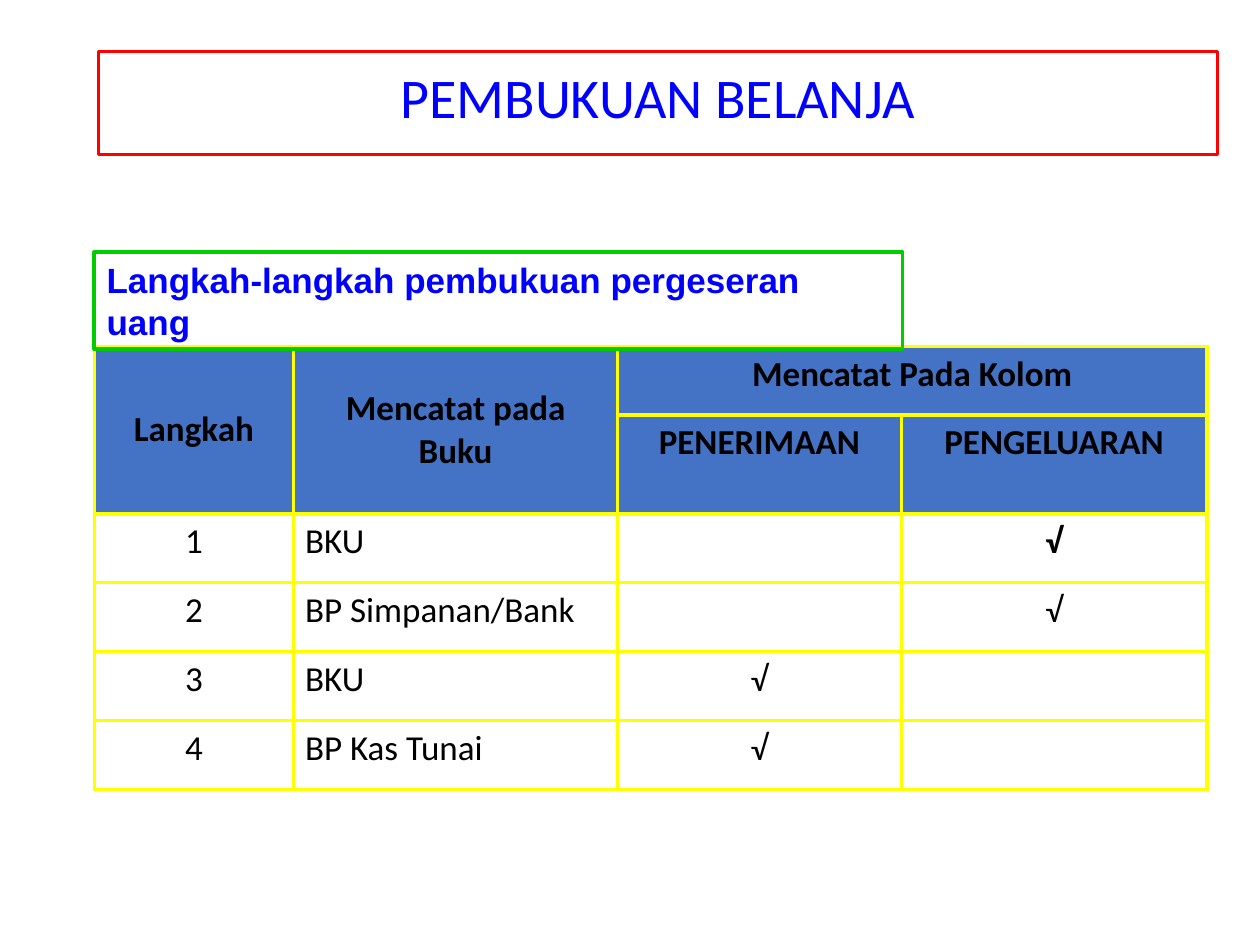
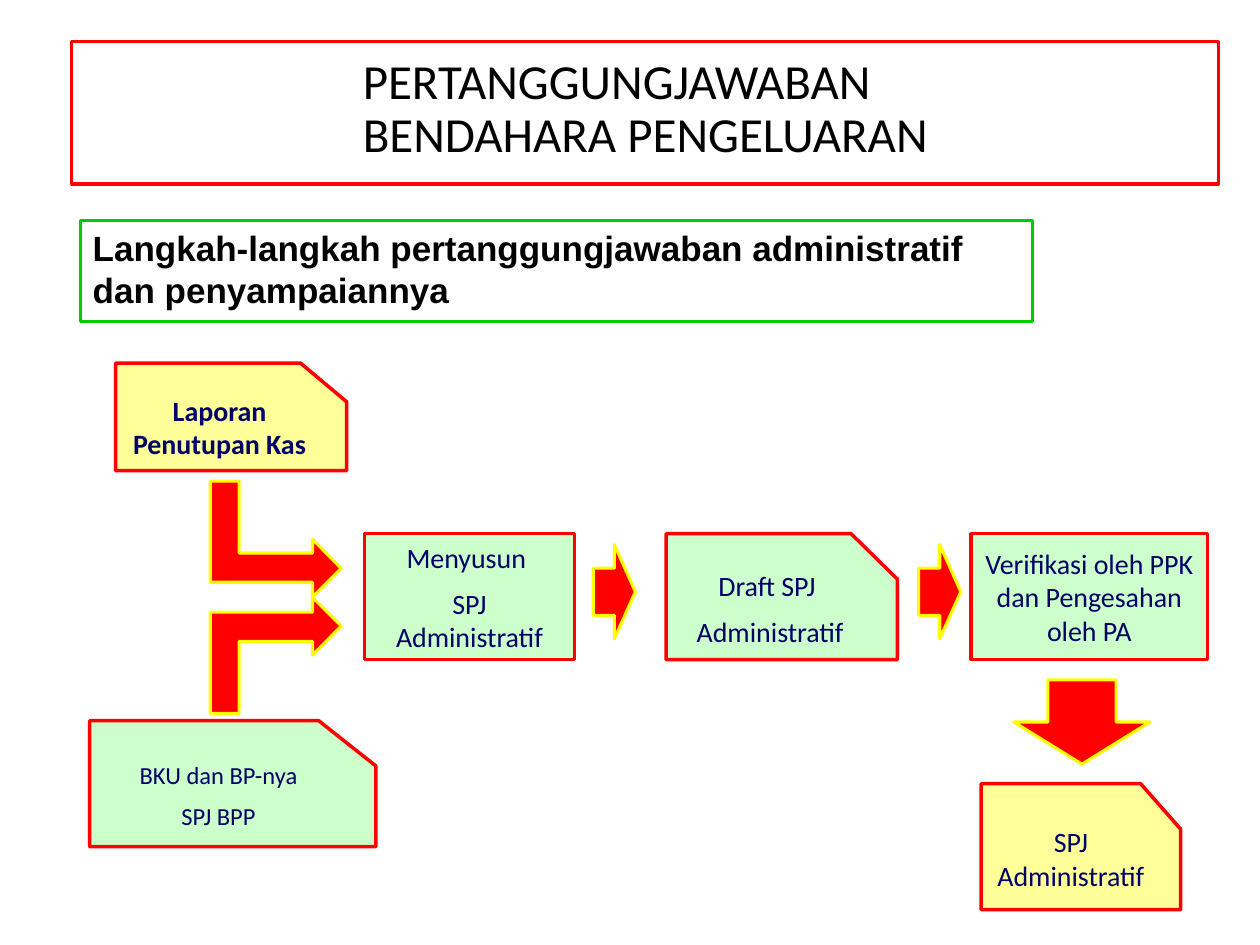
from dataclasses import dataclass

from lxml.etree import SubElement
from pptx import Presentation
from pptx.dml.color import RGBColor
from pptx.enum.shapes import MSO_SHAPE
from pptx.enum.text import MSO_ANCHOR, MSO_AUTO_SIZE, PP_ALIGN
from pptx.oxml.ns import qn
from pptx.util import Cm, Pt


@dataclass(frozen=True)
class Theme:
    # Colours
    white: str = "FFFFFF"
    black: str = "000000"
    blue: str = "0000FF"
    navy: str = "000066"
    red: str = "FF0000"
    yellow: str = "FFFF00"
    green: str = "00CC00"
    header: str = "4472C4"
    mint: str = "CCFFCC"
    cream: str = "FFFF99"
    # Fonts and sizes in points
    body_font: str = "Calibri"
    subtitle_font: str = "Arial"
    subtitle_size: int = 20
    table_size: int = 20
    step_size: int = 16
    small_size: int = 14
    # Line widths in points
    thin: float = 1.75
    medium: float = 2
    grid: float = 2.25


THEME = Theme()


class Board:
    """Holds the deck, its style and the current page."""

    def __init__(self, theme):
        self.theme = theme
        self.deck = Presentation()
        self.deck.slide_width, self.deck.slide_height = Cm(25.4), Cm(19.05)
        self.page = None

    def paint(self, shape, fill, line, width):
        if fill:
            shape.fill.solid()
            shape.fill.fore_color.rgb = RGBColor.from_string(fill)
        else:
            shape.fill.background()
        shape.line.color.rgb = RGBColor.from_string(line)
        shape.line.width = Pt(width)

    def style_text(self, frame, size, color, font=None, bold=False, align=PP_ALIGN.LEFT):
        for para in frame.paragraphs:
            para.alignment = align
            for span in para.runs:
                span.font.name = font or self.theme.body_font
                span.font.size = Pt(size)
                span.font.bold = bold
                span.font.color.rgb = RGBColor.from_string(color)

    def new_page(self, title, area, size, color):
        self.page = self.deck.slides.add_slide(self.deck.slide_layouts[5])
        background = self.page.background.fill
        background.solid()
        background.fore_color.rgb = RGBColor.from_string(self.theme.white)
        box = self.page.shapes.title
        box.left, box.top, box.width, box.height = map(Cm, area)
        self.paint(box, None, self.theme.red, self.theme.thin)
        frame = box.text_frame
        frame.text = title
        frame.word_wrap = True
        frame.auto_size = MSO_AUTO_SIZE.NONE
        frame.vertical_anchor = MSO_ANCHOR.MIDDLE
        frame.margin_bottom = Cm(0.25)
        # Centre the text block while its lines stay left aligned
        frame._txBody.bodyPr.set("anchorCtr", "1")
        frame.paragraphs[0].line_spacing = 0.9
        self.style_text(frame, size, color)

    def subtitle(self, text, area, color):
        box = self.page.shapes.add_textbox(*map(Cm, area))
        self.paint(box, None, self.theme.green, self.theme.medium)
        box.text_frame.word_wrap = True
        box.text_frame.auto_size = MSO_AUTO_SIZE.SHAPE_TO_FIT_TEXT
        box.text_frame.text = text
        self.style_text(box.text_frame, self.theme.subtitle_size, color,
                        self.theme.subtitle_font, bold=True)

    def outline(self, points):
        start, *rest = [(Cm(x), Cm(y)) for x, y in points]
        builder = self.page.shapes.build_freeform(*start, scale=1.0)
        builder.add_line_segments(rest, close=True)
        shape = builder.convert_to_shape()
        shape.shadow.inherit = False
        return shape

    def preset(self, kind, area):
        shape = self.page.shapes.add_shape(kind, *map(Cm, area))
        shape.shadow.inherit = False
        return shape

    def label(self, shape, text, fill, size, bold):
        self.paint(shape, fill, self.theme.red, self.theme.medium)
        frame = shape.text_frame
        frame.word_wrap = True
        frame.vertical_anchor = MSO_ANCHOR.MIDDLE
        frame.text = text
        self.style_text(frame, size, self.theme.navy, bold=bold, align=PP_ALIGN.CENTER)
        for para in frame.paragraphs:
            para.space_before = Pt(0.45 * size)

    def step(self, text, area):
        box = self.preset(MSO_SHAPE.RECTANGLE, area)
        self.label(box, text, self.theme.mint, self.theme.step_size, False)

    def document(self, text, area, fill, size=THEME.step_size, bold=False):
        left, top, width, height = area
        cut_x, cut_y = 0.2 * width, 0.36 * height
        right, bottom = left + width, top + height
        card = self.outline([(left, top), (right - cut_x, top), (right, top + cut_y),
                             (right, bottom), (left, bottom)])
        self.label(card, text, fill, size, bold)
        # Keep the text clear of the cut corner
        card.text_frame.margin_right = Cm(0.25 + cut_x / 2)
        card.text_frame.margin_top = Cm(0.13 + cut_y / 2)

    def arrow(self, area, rotation=0):
        arrow = self.preset(MSO_SHAPE.RIGHT_ARROW, area)
        arrow.rotation = rotation
        self.paint(arrow, self.theme.red, self.theme.yellow, self.theme.thin)

    def elbow_arrow(self, left, middle, side):
        """Bent arrow that starts above (-1) or below (1) the middle line."""
        bend = [(0.58, 2.34), (0.58, 0.89), (2.06, 0.89), (2.06, 1.17), (2.64, 0.58),
                (2.06, 0), (2.06, 0.3), (0, 0.3), (0, 2.34)]
        arrow = self.outline([(left + x, middle + side * y) for x, y in bend])
        self.paint(arrow, self.theme.red, self.theme.yellow, self.theme.thin)

    def cell_borders(self, cell):
        properties = cell._tc.get_or_add_tcPr()
        for index, edge in enumerate(("a:lnL", "a:lnR", "a:lnT", "a:lnB")):
            line = SubElement(properties, qn(edge), w=str(Pt(self.theme.grid)))
            fill = SubElement(line, qn("a:solidFill"))
            SubElement(fill, qn("a:srgbClr"), val=self.theme.yellow)
            properties.insert(index, line)

    def table(self, rows, left, top, widths, row_height, header_rows, merges, left_column):
        frame = self.page.shapes.add_table(
            len(rows), len(widths), Cm(left), Cm(top),
            Cm(sum(widths)), Cm(row_height * len(rows)))
        table = frame.table
        table.first_row = table.horz_banding = False
        for column, width in zip(table.columns, widths):
            column.width = Cm(width)
        for r, texts in enumerate(rows):
            table.rows[r].height = Cm(row_height)
            for c, text in enumerate(texts):
                cell = table.cell(r, c)
                is_header = r < header_rows
                cell.margin_left = cell.margin_right = Cm(0.23)
                cell.margin_top = cell.margin_bottom = Cm(0.13)
                if is_header:
                    cell.fill.solid()
                    cell.fill.fore_color.rgb = RGBColor.from_string(self.theme.header)
                else:
                    cell.fill.background()
                self.cell_borders(cell)
                cell.text = text
                align = (PP_ALIGN.LEFT if c == left_column and not is_header
                         else PP_ALIGN.CENTER)
                self.style_text(cell.text_frame, self.theme.table_size, self.theme.black,
                                bold=is_header, align=align)
        for first, last in merges:
            table.cell(*first).merge(table.cell(*last))
        return table


def expense_page(board):
    theme = board.theme
    board.new_page("PEMBUKUAN BELANJA", (1.98, 1.04, 22.56, 2.08), 32, theme.blue)

    # Bookkeeping steps
    rows = [
        ("Langkah", "Mencatat pada Buku", "Mencatat Pada Kolom", ""),
        ("", "", "PENERIMAAN", "PENGELUARAN"),
        ("1", "BKU", "", "√"),
        ("2", "BP Simpanan/Bank", "", "√"),
        ("3", "BKU", "√", ""),
        ("4", "BP Kas Tunai", "√", ""),
    ]
    merges = [((0, 0), (1, 0)), ((0, 1), (1, 1)), ((0, 2), (0, 3))]
    table = board.table(rows, 1.9, 6.98, (4.02, 6.53, 5.72, 6.16), 1.39,
                        header_rows=2, merges=merges, left_column=1)
    for column in (0, 1):
        table.cell(0, column).vertical_anchor = MSO_ANCHOR.MIDDLE
    table.cell(2, 3).text_frame.paragraphs[0].runs[0].font.bold = True

    board.subtitle("Langkah-langkah pembukuan pergeseran uang",
                   (1.9, 5.08, 16.3, 1.96), theme.blue)


def accountability_page(board):
    theme = board.theme
    board.new_page("PERTANGGUNGJAWABAN \vBENDAHARA PENGELUARAN",
                   (1.45, 0.84, 23.11, 2.87), 28, theme.black)
    board.subtitle("Langkah-langkah pertanggungjawaban administratif dan penyampaiannya",
                   (1.62, 4.45, 19.2, 2.03), theme.black)
    flow_top, height = 10.76, 2.54

    # Source documents
    board.document("Laporan Penutupan Kas", (2.33, 7.32, 4.66, 2.17), theme.cream, bold=True)
    board.document("BKU dan BP-nya\nSPJ BPP", (1.81, 14.53, 5.77, height),
                   theme.mint, theme.small_size)
    for side in (-1, 1):
        board.elbow_arrow(4.24, 12.04, side)

    # Main flow
    board.step("Menyusun \nSPJ Administratif", (7.35, flow_top, 4.23, height))
    board.document("Draft SPJ \nAdministratif", (13.43, flow_top, 4.66, height), theme.mint)
    board.step("Verifikasi oleh PPK dan Pengesahan oleh PA",
               (19.58, flow_top, 4.76, height))
    for left in (11.96, 18.52):
        board.arrow((left, 10.98, 0.85, 1.9))

    # Result
    board.arrow((20.96, 13.18, 1.7, 2.75), rotation=90)
    board.document("SPJ Administratif", (19.78, 15.8, 4.02, height), theme.cream)


def main():
    board = Board(THEME)
    expense_page(board)
    accountability_page(board)
    board.deck.save("out.pptx")


if __name__ == "__main__":
    main()
